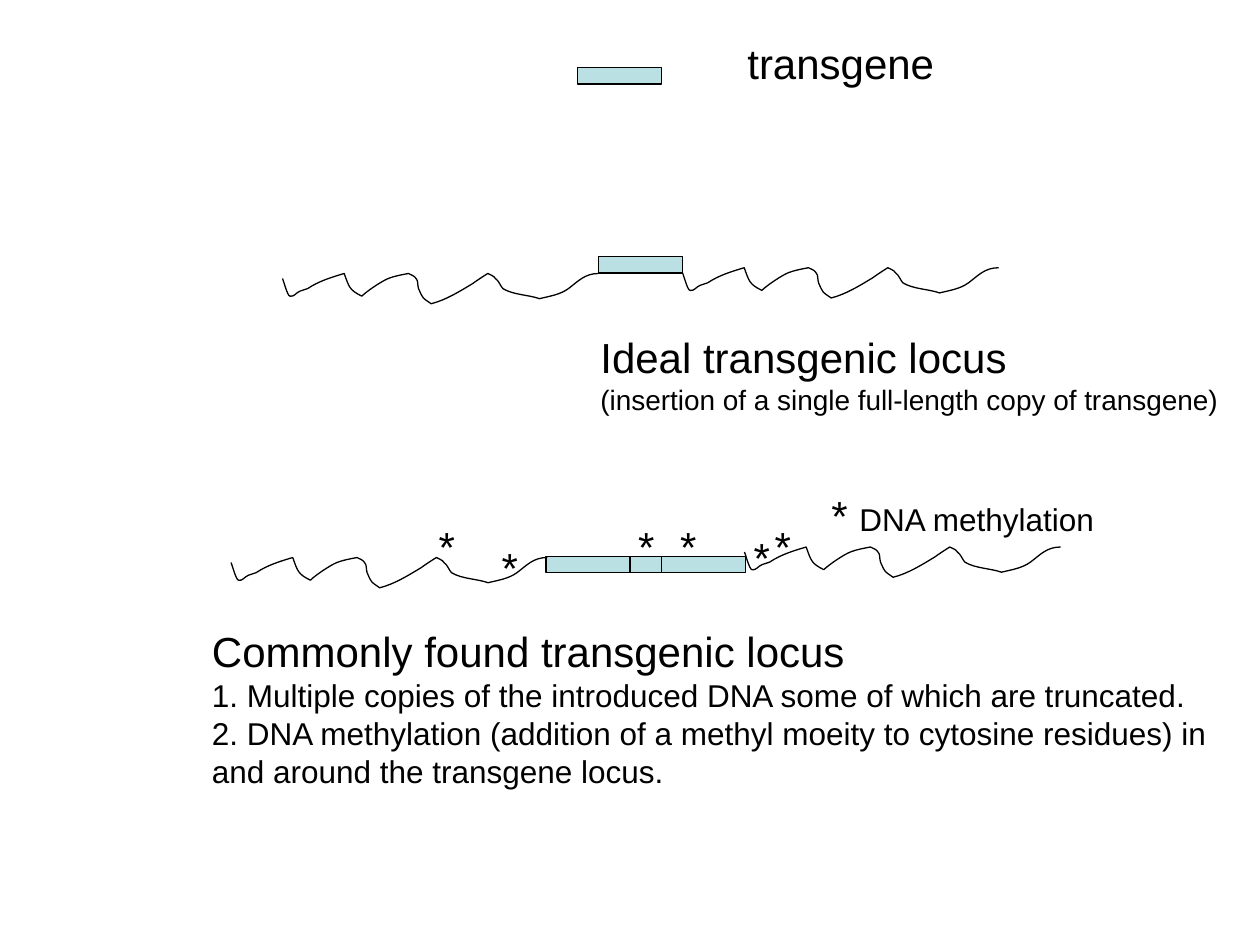
from dataclasses import dataclass

import pptx
import pptx.dml.color
import pptx.enum.shapes
import pptx.enum.text
import pptx.oxml.ns
import pptx.util
from lxml import etree

COLORS = {"ink": "000000", "transgene": "BBE0E3"}
FONT = "Arial"
CELL = pptx.util.Inches(1) / 12  # the slide is a grid of 120 columns by 90 rows

# Genomic DNA strand in hundredths of an inch: a start, then cubic segments
STRAND_START = (0, 4)
STRAND_CURVES = [
    ((1, 6), (4, 18), (6, 18)), ((9, 19), (11, 15), (14, 14)),
    ((16, 13), (18, 13), (20, 12)), ((29, 6), (39, 3), (49, 0)),
    ((53, 11), (53, 13), (63, 18)), ((67, 14), (79, 6), (84, 4)),
    ((89, 2), (95, 1), (100, 0)), ((102, 1), (105, 2), (106, 4)),
    ((108, 6), (107, 9), (108, 12)), ((112, 21), (111, 19), (118, 24)),
    ((130, 21), (141, 14), (151, 8)), ((155, 5), (163, 0), (163, 0)),
    ((165, 1), (168, 2), (169, 4)), ((172, 6), (173, 10), (175, 12)),
    ((183, 17), (196, 17), (204, 20)), ((212, 18), (220, 17), (227, 12)),
    ((235, 6), (240, 0), (251, 0)),
]


@dataclass
class Spot:
    col: float
    row: float


@dataclass
class Line:
    runs: list[tuple[str, int]]  # text and size in points


@dataclass
class Label:
    spot: Spot
    cols: float
    rows: float
    lines: list[Line]
    wrap: bool = False


def grid(cells: float) -> int:
    return round(cells * CELL)


def color(name: str) -> pptx.dml.color.RGBColor:
    return pptx.dml.color.RGBColor.from_string(COLORS[name])


def outline(shape) -> None:
    shape.line.color.rgb = color("ink")
    shape.line.width = pptx.util.Pt(0.75)
    shape.shadow.inherit = False


def bend(shape) -> None:
    """Turn each three straight segments into one cubic curve."""
    qn = pptx.oxml.ns.qn
    segments = list(shape._element.iter(qn("a:lnTo")))
    for first in range(0, len(segments), 3):
        curve = etree.Element(qn("a:cubicBezTo"))
        segments[first].addprevious(curve)
        for segment in segments[first:first + 3]:
            curve.append(segment[0])
            segment.getparent().remove(segment)


def draw_strand(slide, spot: Spot) -> None:
    builder = slide.shapes.build_freeform(*STRAND_START, scale=pptx.util.Inches(0.01))
    for curve in STRAND_CURVES:
        builder.add_line_segments(curve, close=False)
    strand = builder.convert_to_shape(grid(spot.col), grid(spot.row))
    bend(strand)
    strand.fill.background()
    outline(strand)


def draw_transgene(slide, spot: Spot) -> None:
    transgene = slide.shapes.add_shape(
        pptx.enum.shapes.MSO_SHAPE.RECTANGLE,
        grid(spot.col), grid(spot.row), grid(8), grid(1.56))
    transgene.fill.solid()
    transgene.fill.fore_color.rgb = color("transgene")
    outline(transgene)


def draw_label(slide, label: Label) -> None:
    box = slide.shapes.add_textbox(grid(label.spot.col), grid(label.spot.row),
                                   grid(label.cols), grid(label.rows))
    frame = box.text_frame
    frame.word_wrap = label.wrap
    frame.auto_size = pptx.enum.text.MSO_AUTO_SIZE.SHAPE_TO_FIT_TEXT
    for index, line in enumerate(label.lines):
        paragraph = frame.add_paragraph() if index else frame.paragraphs[0]
        paragraph.font.name = FONT
        paragraph.font.color.rgb = color("ink")
        paragraph.font.size = pptx.util.Pt(line.runs[0][1])
        for text, size in line.runs:
            run = paragraph.add_run()
            run.text = text
            if size != line.runs[0][1]:
                run.font.size = pptx.util.Pt(size)


LEGEND = Spot(55, 6.45)
IDEAL_STRANDS = [Spot(26.9, 26.05), Spot(65, 25.5)]
IDEAL_TRANSGENE = Spot(57, 24.45)
COMMON_TRANSGENES = [Spot(col, 53) for col in (63, 55, 52)]  # overlapping copies
COMMON_STRANDS = [Spot(70.9, 52.1), Spot(22, 53.1)]

METHYLATIONS = [Spot(40.6, 49), Spot(46.6, 51), Spot(59.6, 49),
                Spot(63.6, 49), Spot(72.6, 49), Spot(70.6, 50)]

TRANSGENE_LABEL = Label(Spot(70, 3), 20.4, 6, [Line([("transgene", 24)])])
IDEAL_LABEL = Label(Spot(56, 31), 62, 9.2, [
    Line([("Ideal transgenic locus", 24)]),
    Line([("(insertion of a single full-length copy of transgene)", 16)])])
COMMON_LABEL = Label(Spot(19, 59), 99, 17, [
    Line([("Commonly found transgenic locus", 24)]),
    Line([("1. Multiple copies of the introduced DNA some of which are truncated.", 18)]),
    Line([("2. DNA methylation (addition of a methyl moeity to cytosine residues) "
           "in and around the transgene locus.", 18)])], wrap=True)
METHYLATION_LABEL = Label(Spot(78, 46), 27.7, 6,
                          [Line([("* ", 24), ("DNA methylation", 18)])])


def main() -> None:
    deck = pptx.Presentation()
    deck.slide_width, deck.slide_height = grid(120), grid(90)
    slide = deck.slides.add_slide(deck.slide_layouts[6])

    # Legend and ideal locus
    draw_transgene(slide, LEGEND)
    for spot in IDEAL_STRANDS:
        draw_strand(slide, spot)
    draw_label(slide, TRANSGENE_LABEL)
    draw_label(slide, IDEAL_LABEL)
    draw_transgene(slide, IDEAL_TRANSGENE)

    # Commonly found locus with its methylation marks
    for spot in COMMON_TRANSGENES:
        draw_transgene(slide, spot)
    for spot in COMMON_STRANDS:
        draw_strand(slide, spot)
    for spot in METHYLATIONS:
        draw_label(slide, Label(spot, 4, 6, [Line([("*", 24)])]))
    draw_label(slide, COMMON_LABEL)
    draw_label(slide, METHYLATION_LABEL)

    deck.save("out.pptx")


if __name__ == "__main__":
    main()
